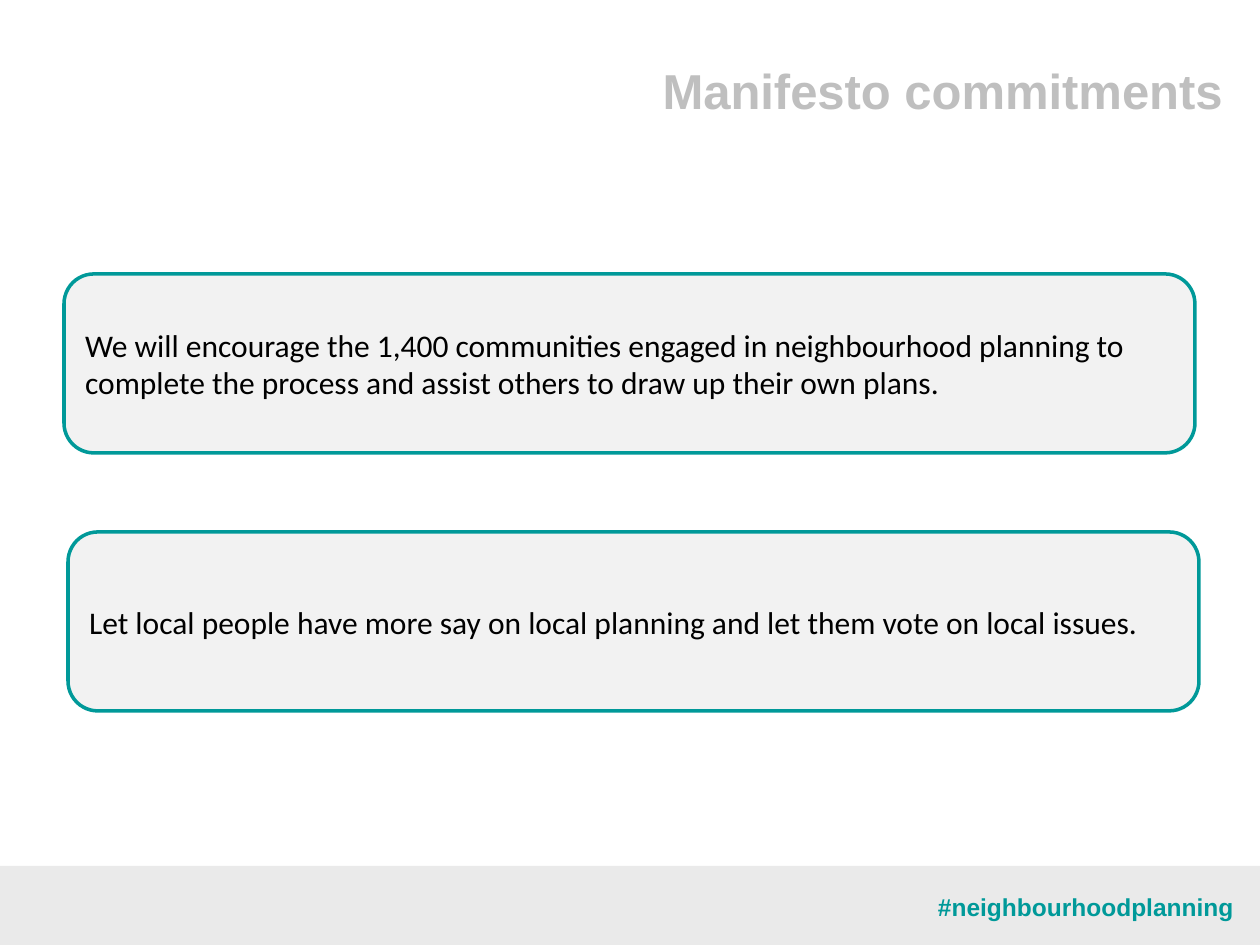
"""Build the manifesto commitments slide."""
from pptx import Presentation, util as u
from pptx.dml.color import RGBColor
from pptx.enum import shapes, text

PX = 914400 // 126
TEAL, PALE, BAND = "009999", "F2F2F2", "EAEAEA"
KIND, ALIGN, ANCHOR = shapes.MSO_SHAPE, text.PP_ALIGN, text.MSO_ANCHOR

CARDS = [
    (64, 274, "We will encourage the 1,400 communities engaged in neighbourhood "
     "planning to complete the process and assist others to draw up their own plans."),
    (68, 532, "Let local people have more say on local planning and let them "
     "vote on local issues."),
]
CARD = (1131, 179)
LABELS = [
    ((912, 885, 348, 43), "#neighbourhoodplanning", 14, TEAL, ALIGN.CENTER, ANCHOR.MIDDLE),
    ((281, 54, 954, 72), "Manifesto commitments", 28, "BFBFBF", ALIGN.RIGHT, ANCHOR.BOTTOM),
]


def color(code):
    return RGBColor.from_string(code)


def place(box):
    return [n * PX for n in box]


def panel(slide, kind, box, fill, edge=None):
    shape = slide.shapes.add_shape(kind, *place(box))
    shape.shadow.inherit = False
    shape.fill.solid()
    shape.fill.fore_color.rgb = color(fill)
    if edge:
        shape.line.color.rgb = color(edge)
        shape.line.width = u.Pt(2)
    else:
        shape.line.fill.background()
    return shape


def write(shape, words, size, face, ink, align, anchor, bold=False):
    frame = shape.text_frame
    frame.word_wrap = True
    frame.vertical_anchor = anchor
    para = frame.paragraphs[0]
    para.text = words
    para.alignment = align
    font = para.font
    font.size, font.name, font.bold = u.Pt(size), face, bold
    font.color.rgb = color(ink)


def main():
    deck = Presentation()
    deck.slide_width, deck.slide_height = place((1260, 945))
    slide = deck.slides.add_slide(deck.slide_layouts[6])
    for left, top, words in CARDS:
        card = panel(slide, KIND.ROUNDED_RECTANGLE, (left, top, *CARD), PALE, TEAL)
        write(card, words, 18, "Calibri", "000000", ALIGN.LEFT, ANCHOR.MIDDLE)
    panel(slide, KIND.RECTANGLE, (0, 866, 1260, 79), BAND)
    for box, words, size, ink, align, anchor in LABELS:
        label = slide.shapes.add_textbox(*place(box))
        write(label, words, size, "Arial", ink, align, anchor, True)
    deck.save("out.pptx")


if __name__ == "__main__":
    main()
